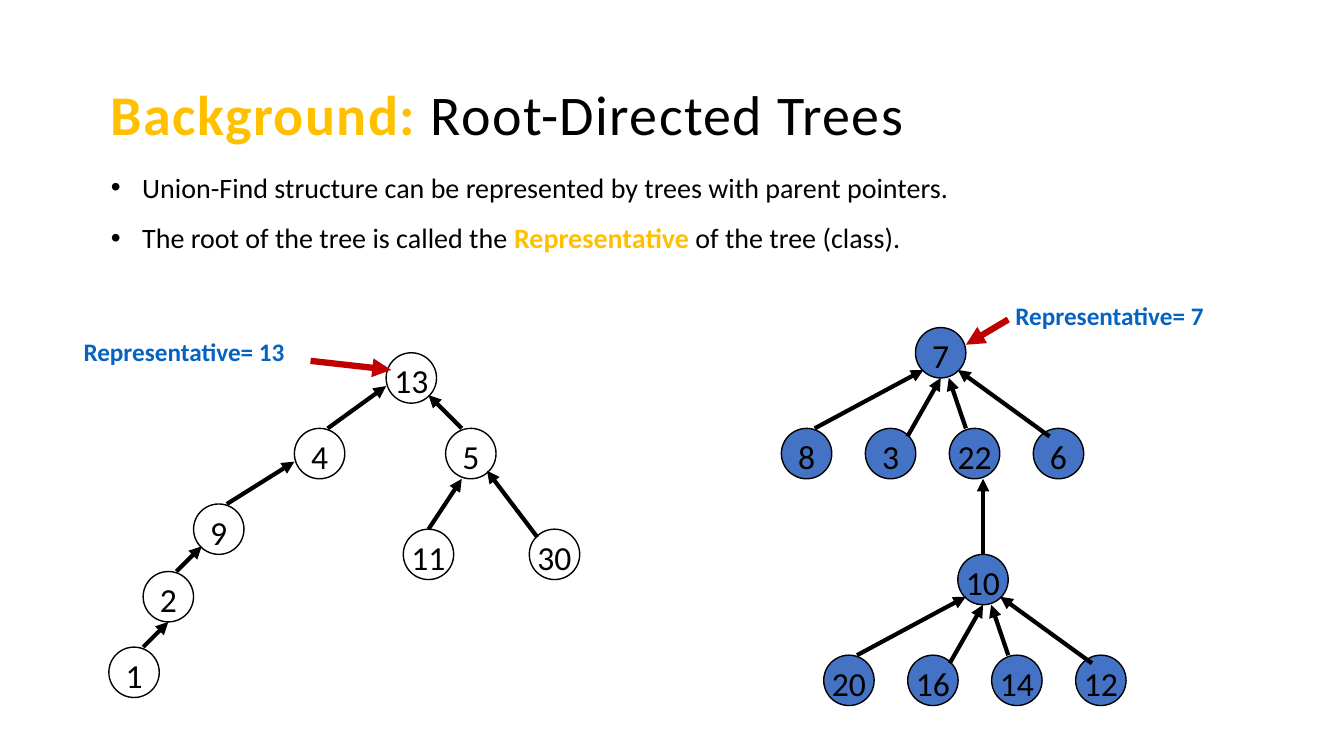
from lxml.etree import SubElement
from pptx import Presentation
from pptx.dml.color import RGBColor
from pptx.enum.shapes import MSO_CONNECTOR, MSO_SHAPE
from pptx.enum.text import MSO_ANCHOR, MSO_AUTO_SIZE, PP_ALIGN
from pptx.oxml.ns import qn
from pptx.util import Inches, Pt

BLACK = RGBColor(0x00, 0x00, 0x00)
GOLD = RGBColor(0xFF, 0xC0, 0x00)
BLUE = RGBColor(0x44, 0x72, 0xC4)
LABEL_BLUE = RGBColor(0x05, 0x63, 0xC1)
RED = RGBColor(0xC0, 0x00, 0x00)
FONT = "Calibri"
NODE_SIZE = 0.5

TITLE = [("Background: ", True), ("Root-Directed Trees", False)]
BULLETS = [
    [("Union-Find structure can be represented by trees with parent pointers.", False)],
    [("The root of the tree is called the ", False), ("Representative", True),
     (" of the tree (class).", False)],
]

LEFT_NODES = [
    ("13", 3.83, 3.5), ("4", 2.92, 4.25), ("5", 4.42, 4.25), ("9", 1.92, 5),
    ("11", 4, 5.25), ("30", 5.25, 5.25), ("2", 1.42, 5.67), ("1", 1.08, 6.42),
]
LEFT_ARROWS = [
    ((3.25, 4.25), (3.83, 3.83)), ((4.58, 4.25), (4.25, 3.92)),
    ((2.25, 5), (2.92, 4.58)), ((1.75, 5.67), (2, 5.42)),
    ((4.25, 5.25), (4.58, 4.75)), ((5.33, 5.33), (4.83, 4.67)),
    ((1.42, 6.42), (1.67, 6.17)),
]

FANS = [
    ("7", 9.08, 3.25, ["8", "3", "22", "6"]),
    ("10", 9.5, 5.5, ["20", "16", "14", "12"]),
]
FAN_FIRST_CHILD, FAN_STEP, FAN_DROP = -1.33, 0.833, 1
FAN_ARROWS = [
    ((-1, 1), (0.08, 0.42)), ((-0.08, 1.08), (0.25, 0.5)),
    ((0.5, 1), (0.33, 0.5)), ((1.33, 1.08), (0.42, 0.42)),
]
FAN_LINK = ((9.75, 5.5), (9.75, 4.75))

REPRESENTATIVES = [
    ("Representative= 13", (0.73, 3.29, 2.28, 0.4), PP_ALIGN.LEFT, (3.08, 3.58), (3.88, 3.67)),
    ("Representative= 7", (9.92, 2.93, 2.17, 0.4), PP_ALIGN.CENTER, (10, 3.17), (9.58, 3.42)),
]


def place(shape, left, top, width, height):
    """Move and size a shape in inches."""
    shape.left, shape.top = Inches(left), Inches(top)
    shape.width, shape.height = Inches(width), Inches(height)


def add_run(paragraph, text, size, color=BLACK, bold=False):
    """Add one formatted run to a paragraph."""
    run = paragraph.add_run()
    run.text = text
    run.font.name, run.font.size, run.font.bold = FONT, Pt(size), bold
    run.font.color.rgb = color
    return run


def add_title(slide):
    """Fill the title placeholder."""
    title = slide.shapes.title
    place(title, 1, 0.5, 9.51, 1)
    frame = title.text_frame
    frame.auto_size, frame.vertical_anchor = MSO_AUTO_SIZE.NONE, MSO_ANCHOR.BOTTOM
    paragraph = frame.paragraphs[0]
    paragraph.alignment, paragraph.line_spacing = PP_ALIGN.LEFT, 0.8
    for text, strong in TITLE:
        run = add_run(paragraph, text, 40, GOLD if strong else BLACK, strong)
        run.font._element.set("spc", "100")


def add_bullets(slide):
    """Fill the body placeholder with the bullet list."""
    body = slide.placeholders[1]
    place(body, 1, 1.64, 11.08, 1.28)
    frame = body.text_frame
    frame.auto_size, frame.vertical_anchor = MSO_AUTO_SIZE.NONE, MSO_ANCHOR.TOP
    for index, pieces in enumerate(BULLETS):
        paragraph = frame.add_paragraph() if index else frame.paragraphs[0]
        paragraph.space_before = Pt(12 if index else 0)
        properties = paragraph._p.get_or_add_pPr()
        properties.set("marL", str(Inches(0.31)))
        properties.set("indent", str(-Inches(0.31)))
        SubElement(properties, qn("a:buFont"), typeface="Arial")
        SubElement(properties, qn("a:buChar"), char="•")
        for text, strong in pieces:
            add_run(paragraph, text, 20, GOLD if strong else BLACK, strong)


def add_node(slide, text, left, top, fill=None):
    """Draw one tree node with its value."""
    node = slide.shapes.add_shape(MSO_SHAPE.OVAL, Inches(left), Inches(top),
                                  Inches(NODE_SIZE), Inches(NODE_SIZE))
    node.shadow.inherit = False
    if fill is None:
        node.fill.background()
    else:
        node.fill.solid()
        node.fill.fore_color.rgb = fill
    node.line.color.rgb, node.line.width = BLACK, Pt(1)
    frame = node.text_frame
    frame.word_wrap, frame.vertical_anchor = False, MSO_ANCHOR.MIDDLE
    frame.margin_left = frame.margin_right = frame.margin_bottom = 0
    frame.margin_top = Inches(0.05)
    frame.paragraphs[0].alignment = PP_ALIGN.CENTER
    add_run(frame.paragraphs[0], text, 24)


def add_arrow(slide, start, end, color=BLACK, width=3):
    """Draw an arrow whose head is at the end point."""
    points = [Inches(value) for value in (*start, *end)]
    arrow = slide.shapes.add_connector(MSO_CONNECTOR.STRAIGHT, *points)
    arrow.line.color.rgb, arrow.line.width = color, Pt(width)
    SubElement(arrow.line._get_or_add_ln(), qn("a:tailEnd"), type="triangle")
    SubElement(arrow._element.spPr, qn("a:effectLst"))


def add_fan(slide, root, left, top, children):
    """Draw a root, its row of children and their parent pointers."""
    add_node(slide, root, left, top, BLUE)
    for index, child in enumerate(children):
        child_left = left + FAN_FIRST_CHILD + index * FAN_STEP
        add_node(slide, child, child_left, top + FAN_DROP, BLUE)
    for (start_x, start_y), (end_x, end_y) in FAN_ARROWS:
        add_arrow(slide, (left + start_x, top + start_y), (left + end_x, top + end_y))


def add_representative(slide, text, box, alignment, start, end):
    """Draw a root label and the red arrow to its root."""
    add_arrow(slide, start, end, RED, 4.5)
    label = slide.shapes.add_textbox(*[Inches(value) for value in box])
    label.text_frame.word_wrap = False
    paragraph = label.text_frame.paragraphs[0]
    paragraph.alignment = alignment
    add_run(paragraph, text, 18, LABEL_BLUE, True)


def main():
    """Build the slide and save it."""
    presentation = Presentation()
    presentation.slide_width, presentation.slide_height = Inches(13.33), Inches(7.5)
    slide = presentation.slides.add_slide(presentation.slide_layouts[1])
    add_title(slide)
    add_bullets(slide)
    for node in LEFT_NODES:
        add_node(slide, *node)
    for arrow in LEFT_ARROWS:
        add_arrow(slide, *arrow)
    for fan in FANS:
        add_fan(slide, *fan)
    add_arrow(slide, *FAN_LINK)
    for representative in REPRESENTATIVES:
        add_representative(slide, *representative)
    presentation.save("out.pptx")


if __name__ == "__main__":
    main()
